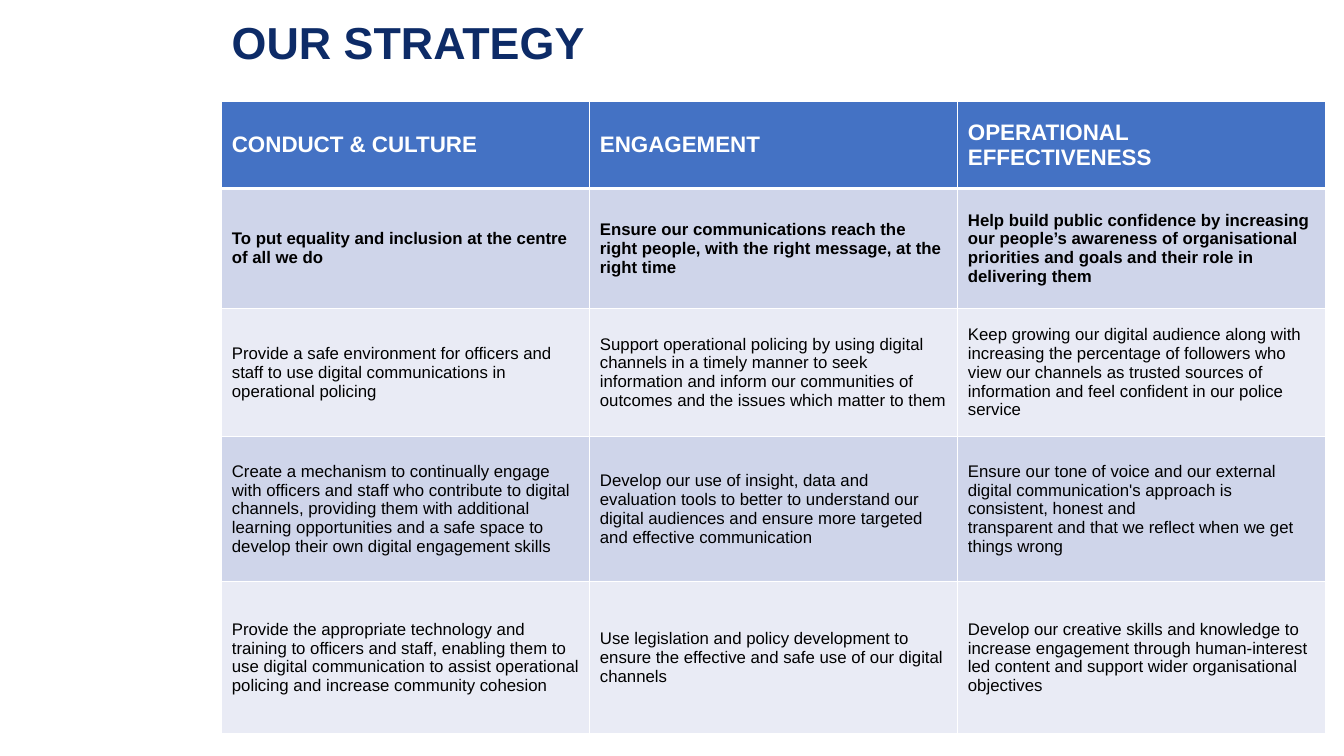
"""Build the strategy slide: a title above a three-column table of aims."""
import dataclasses

import lxml.etree
import pptx
import pptx.dml.color
import pptx.enum.text
import pptx.oxml.ns
import pptx.util
from pptx.util import Inches


@dataclasses.dataclass(frozen=True)
class Theme:
    font: str = "Arial"
    title_color: str = "0D2B67"
    header_fill: str = "4472C4"
    band_fills: tuple = ("CFD5EA", "E9EBF5")
    header_text: str = "FFFFFF"
    body_text: str = "000000"
    border: str = "FFFFFF"
    title_size: int = 32
    header_size: int = 16
    body_size: int = 12


theme = Theme()


def style_text(text_frame, size, color, bold):
    """Format every run and centre the text vertically."""
    text_frame.vertical_anchor = pptx.enum.text.MSO_ANCHOR.MIDDLE
    for paragraph in text_frame.paragraphs:
        for run in paragraph.runs:
            run.font.name = theme.font
            run.font.size = pptx.util.Pt(size)
            run.font.bold = bold
            run.font.color.rgb = pptx.dml.color.RGBColor.from_string(color)


def set_borders(cell, widths):
    """Draw cell borders from a mapping of side to width in points."""
    properties = cell._tc.get_or_add_tcPr()
    for side, width in widths.items():
        line = lxml.etree.SubElement(properties, pptx.oxml.ns.qn(f"a:ln{side}"), w=str(pptx.util.Pt(width)))
        fill = lxml.etree.SubElement(line, pptx.oxml.ns.qn("a:solidFill"))
        lxml.etree.SubElement(fill, pptx.oxml.ns.qn("a:srgbClr"), val=theme.border)


strategy_rows = [
    ["CONDUCT & CULTURE", "ENGAGEMENT", "OPERATIONAL EFFECTIVENESS"],
    [
        "To put equality and inclusion at the centre of all we do",
        "Ensure our communications reach the right people, with the right message, at the right time",
        "Help build public confidence by increasing our people’s awareness of organisational "
        "priorities and goals and their role in delivering them",
    ],
    [
        "Provide a safe environment for officers and staff to use digital communications in "
        "operational policing",
        "Support operational policing by using digital channels in a timely manner to seek "
        "information and inform our communities of outcomes and the issues which matter to them",
        "Keep growing our digital audience along with increasing the percentage of followers who "
        "view our channels as trusted sources of information and feel confident in our police service",
    ],
    [
        "Create a mechanism to continually engage with officers and staff who contribute to digital "
        "channels, providing them with additional learning opportunities and a safe space to "
        "develop their own digital engagement skills",
        "Develop our use of insight, data and evaluation tools to better to understand our digital "
        "audiences and ensure more targeted and effective communication",
        "Ensure our tone of voice and our external digital communication's "
        "approach is consistent, honest and\n"
        "transparent and that we reflect when we get things wrong",
    ],
    [
        "Provide the appropriate technology and training to officers and staff, enabling them to "
        "use digital communication to assist operational policing and increase community cohesion",
        "Use legislation and policy development to ensure the effective and safe use of our "
        "digital channels",
        "Develop our creative skills and knowledge to increase engagement through human-interest "
        "led content and support wider organisational objectives",
    ],
]
row_heights = [0.86, 1.19, 1.27, 1.44, 1.51]
column_width = 3.65
left = 2.2

presentation = pptx.Presentation()
presentation.slide_width = Inches(13.33)
presentation.slide_height = Inches(7.5)
slide = presentation.slides.add_slide(presentation.slide_layouts[6])

title = slide.shapes.add_textbox(Inches(left), Inches(0.13), Inches(11.03), Inches(0.64))
title.text_frame.word_wrap = True
title.text_frame.text = "OUR STRATEGY"
title.text_frame.paragraphs[0].line_spacing = 0.9
style_text(title.text_frame, theme.title_size, theme.title_color, True)

table = slide.shapes.add_table(
    len(strategy_rows), len(strategy_rows[0]), Inches(left), Inches(1.01),
    Inches(column_width * len(strategy_rows[0])), Inches(sum(row_heights)),
).table
for column in table.columns:
    column.width = Inches(column_width)

for row_index, (texts, height) in enumerate(zip(strategy_rows, row_heights)):
    table.rows[row_index].height = Inches(height)
    is_header = row_index == 0
    fill_color = theme.header_fill if is_header else theme.band_fills[(row_index - 1) % 2]
    text_color = theme.header_text if is_header else theme.body_text
    size = theme.header_size if is_header else theme.body_size
    border_widths = {"L": 1, "R": 1, "T": 3 if row_index == 1 else 1, "B": 3 if is_header else 1}
    for column_index, text in enumerate(texts):
        cell = table.cell(row_index, column_index)
        cell.text_frame.text = text
        cell.vertical_anchor = pptx.enum.text.MSO_ANCHOR.MIDDLE
        style_text(cell.text_frame, size, text_color, row_index <= 1)
        set_borders(cell, border_widths)
        cell.fill.solid()
        cell.fill.fore_color.rgb = pptx.dml.color.RGBColor.from_string(fill_color)

presentation.save("out.pptx")
